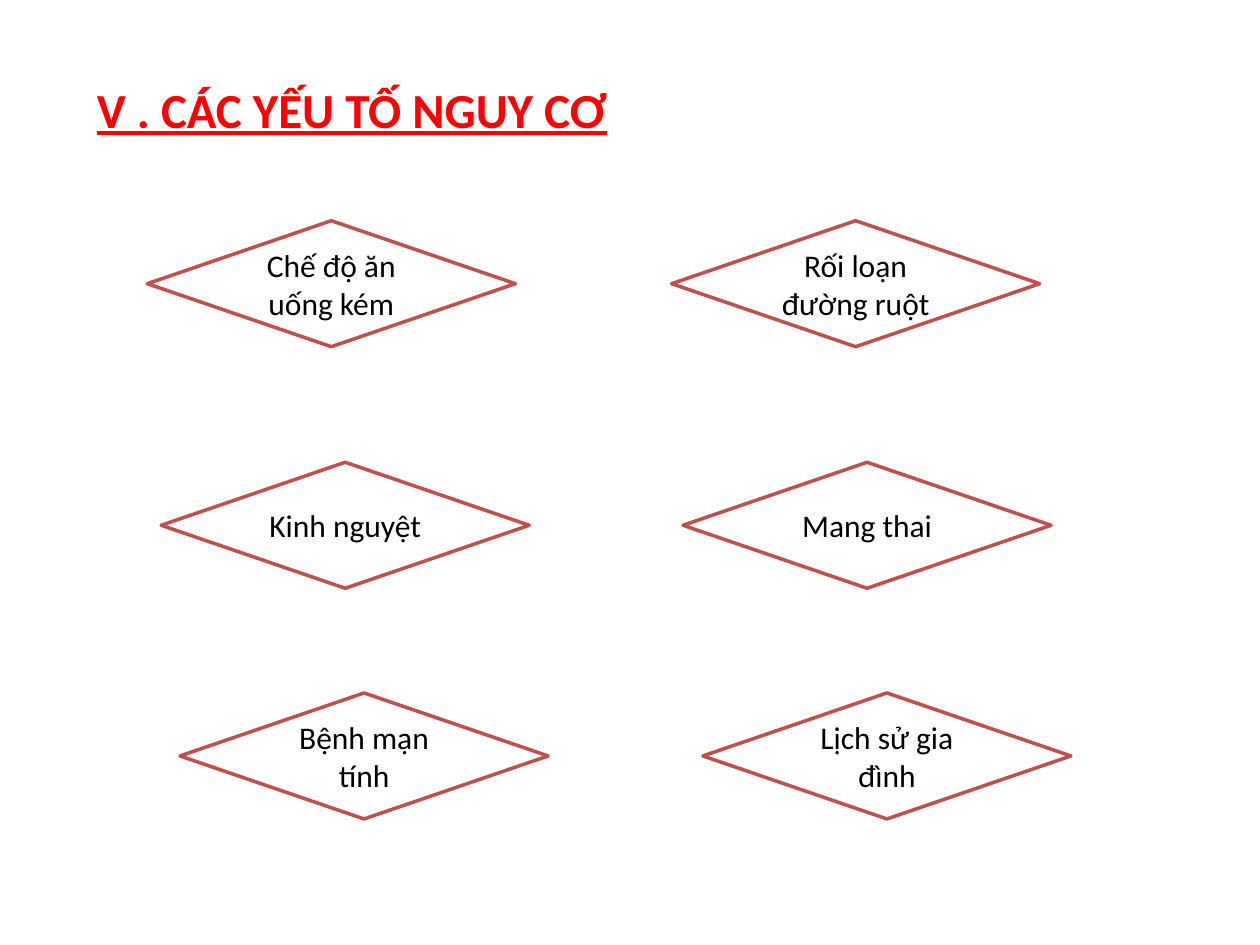
from pptx import Presentation
from pptx.dml.color import RGBColor
from pptx.enum.shapes import MSO_SHAPE
from pptx.enum.text import MSO_ANCHOR, MSO_AUTO_SIZE, PP_ALIGN
from pptx.util import Cm, Pt

DIAMOND = MSO_SHAPE.FLOWCHART_DECISION
TOP, MIDDLE = MSO_ANCHOR.TOP, MSO_ANCHOR.MIDDLE
LEFT, CENTER = PP_ALIGN.LEFT, PP_ALIGN.CENTER
FIT_SHAPE = MSO_AUTO_SIZE.SHAPE_TO_FIT_TEXT
TITLE_ONLY = 5

TITLE_FONT = {"name": "Calibri", "size": Pt(28), "bold": True, "underline": True}
LABEL_FONT = {"name": "Calibri", "size": Pt(18)}
DIAMOND_WIDTH, DIAMOND_HEIGHT = 7.42, 2.54

# Each row: left and top offset in the grid, distance to the second column, labels
RISK_ROWS = [
    (0, 0, 10.57, ("Chế độ ăn uống kém", "Rối loạn đường ruột")),
    (0.28, 4.87, 10.52, ("Kinh nguyệt", "Mang thai")),
    (0.66, 9.52, 10.54, ("Bệnh mạn tính", "Lịch sử gia đình")),
]


def color(hex_value):
    return RGBColor.from_string(hex_value)


def write_text(shape, text, font_format, hex_color, alignment, anchor):
    frame = shape.text_frame
    frame.word_wrap = True
    frame.vertical_anchor = anchor
    paragraph = frame.paragraphs[0]
    paragraph.alignment = alignment
    run = paragraph.add_run()
    run.text = text
    for name, value in font_format.items():
        setattr(run.font, name, value)
    run.font.color.rgb = color(hex_color)


def place_title(slide, left, top, width, height):
    title = slide.shapes.title
    title.left, title.top = Cm(left), Cm(top)
    title.width, title.height = Cm(width), Cm(height)
    write_text(title, "V . CÁC YẾU TỐ NGUY CƠ", TITLE_FONT, "FF0000", LEFT, TOP)
    title.text_frame.auto_size = FIT_SHAPE


def add_diamond(slide, left, top, label):
    shape = slide.shapes.add_shape(
        DIAMOND, Cm(left), Cm(top), Cm(DIAMOND_WIDTH), Cm(DIAMOND_HEIGHT))
    shape.shadow.inherit = False
    shape.fill.solid()
    shape.fill.fore_color.rgb = color("FFFFFF")
    shape.line.color.rgb = color("C0504D")
    shape.line.width = Pt(2)
    write_text(shape, label, LABEL_FONT, "000000", CENTER, MIDDLE)


def add_risk_factors(slide, left, top):
    for row_left, row_top, column_step, labels in RISK_ROWS:
        for column, label in enumerate(labels):
            add_diamond(slide, left + row_left + column * column_step,
                        top + row_top, label)


def main():
    presentation = Presentation()
    presentation.slide_width, presentation.slide_height = Cm(25.4), Cm(19.05)
    slide = presentation.slides.add_slide(presentation.slide_layouts[TITLE_ONLY])

    # Heading
    place_title(slide, 1.7, 1.47, 21.59, 1.45)
    # Six risk factors in two columns
    add_risk_factors(slide, 2.97, 4.45)

    presentation.save("out.pptx")


if __name__ == "__main__":
    main()
